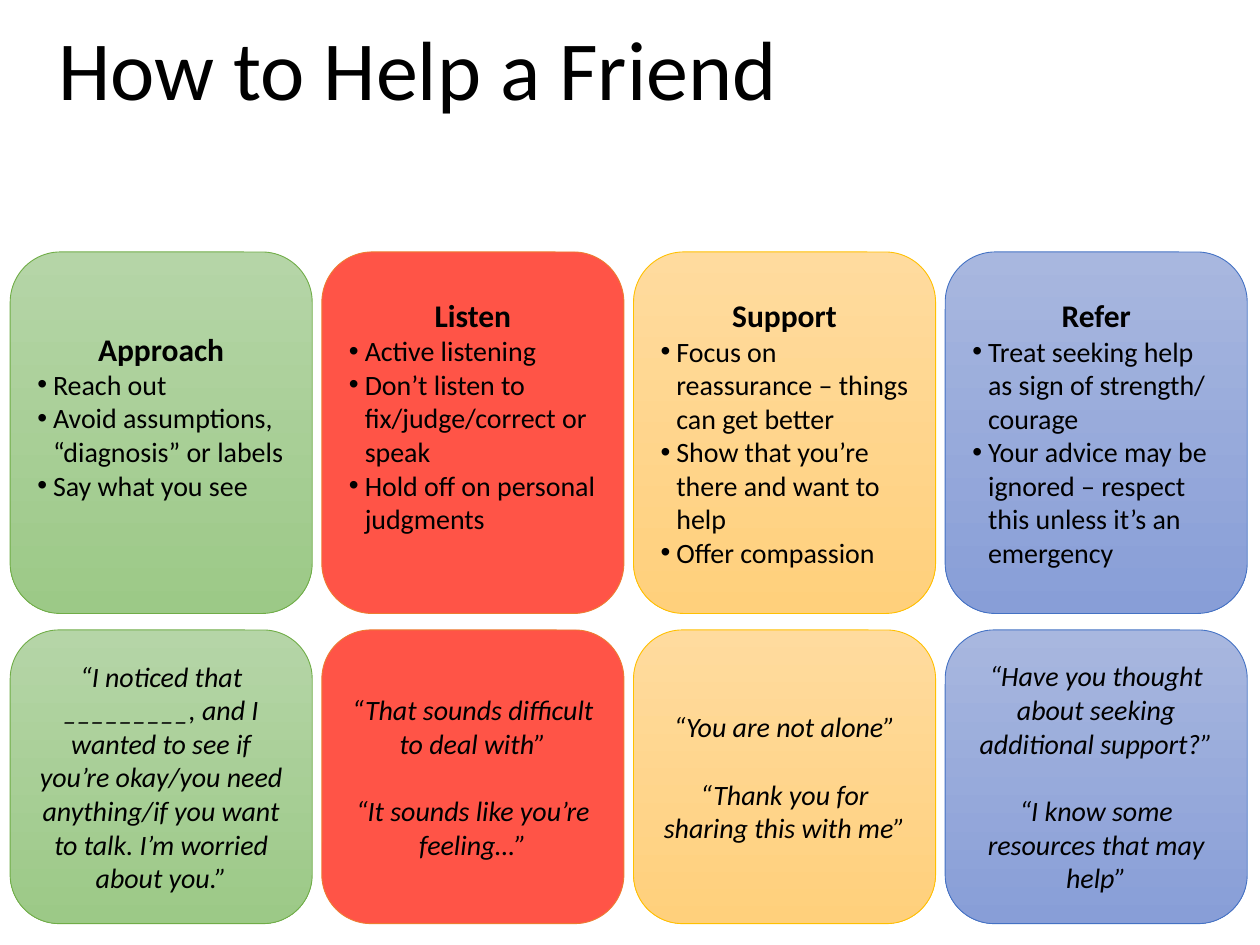
from lxml.etree import SubElement
from pptx import Presentation
from pptx.dml.color import RGBColor
from pptx.enum.shapes import MSO_SHAPE
from pptx.enum.text import MSO_ANCHOR, MSO_AUTO_SIZE, PP_ALIGN
from pptx.oxml.ns import qn
from pptx.util import Pt

TITLE = "How to Help a Friend"
# "fill" holds one colour, or the top and bottom of a gradient.
# "lift" raises the centred tips by adding to the bottom margin.
STEPS = [
    dict(name="Approach", fill=["B5D5A7", "9CC987"], outline="70AD47", lift=19.5,
         tips=["Reach out",
               "Avoid assumptions, “diagnosis” or labels",
               "Say what you see"],
         quotes=["“I noticed that _________, and I wanted to see if you’re okay/you need "
                 "anything/if you want to talk. I’m worried about you.”"]),
    dict(name="Listen", fill=["FF5447"], outline="ED7D31", lift=19.5,
         tips=["Active listening",
               "Don’t listen to fix/judge/correct or speak",
               "Hold off on personal judgments"],
         quotes=["“That sounds difficult to deal with”",
                 "“It sounds like you’re feeling…”"]),
    dict(name="Support", fill=["FFDB9E", "FFD07C"], outline="FFC000", lift=0,
         tips=["Focus on reassurance – things can get better",
               "Show that you’re there and want to help",
               "Offer compassion"],
         quotes=["“You are not alone”",
                 "“Thank you for sharing this with me”"]),
    dict(name="Refer", fill=["A8B7DF", "889ED7"], outline="4472C4", lift=0,
         tips=["Treat seeking help as sign of strength/\vcourage",
               "Your advice may be ignored – respect this unless it’s an emergency"],
         quotes=["“Have you thought about seeking additional support?”",
                 "“I know some resources that may help”"]),
]

FONT = "Calibri"
LEFT, PITCH, CARD_WIDTH = 5.8, 178.1, 172.6
TIPS_TOP, TIPS_HEIGHT = 144, 206.6
QUOTES_TOP, QUOTES_HEIGHT = 360, 167.8
BULLET_INDENT = 9
QUOTE_GAP = 19.5


def rgb(hex_code):
    return RGBColor.from_string(hex_code)


def style(paragraph, size, bold=False, italic=False):
    for run in paragraph.runs:
        run.font.name = FONT
        run.font.size = Pt(size)
        run.font.bold = bold
        run.font.italic = italic
        run.font.color.rgb = rgb("000000")


def add_bullet(paragraph):
    properties = paragraph._p.get_or_add_pPr()
    properties.set("marL", str(Pt(BULLET_INDENT)))
    properties.set("indent", str(-Pt(BULLET_INDENT)))
    SubElement(properties, qn("a:buFont"), typeface="Arial")
    SubElement(properties, qn("a:buChar"), char="•")


def add_card(slide, step, left, top, height):
    """Add an empty rounded card in the step's colours; return its text frame."""
    card = slide.shapes.add_shape(MSO_SHAPE.ROUNDED_RECTANGLE,
                                  Pt(left), Pt(top), Pt(CARD_WIDTH), Pt(height))
    card.shadow.inherit = False
    card.line.color.rgb = rgb(step["outline"])
    card.line.width = Pt(0.5)
    if len(step["fill"]) == 1:
        card.fill.solid()
        card.fill.fore_color.rgb = rgb(step["fill"][0])
    else:
        card.fill.gradient()
        card.fill.gradient_angle = 270
        for stop, color in zip(card.fill.gradient_stops, step["fill"]):
            stop.color.rgb = rgb(color)
    frame = card.text_frame
    frame.word_wrap = True
    frame.vertical_anchor = MSO_ANCHOR.MIDDLE
    return frame


def add_tips(slide, step, left):
    frame = add_card(slide, step, left, TIPS_TOP, TIPS_HEIGHT)
    frame.margin_bottom = Pt(3.6 + step["lift"])
    frame.text = step["name"]
    heading = frame.paragraphs[0]
    heading.alignment = PP_ALIGN.CENTER
    style(heading, 18, bold=True)
    for tip in step["tips"]:
        paragraph = frame.add_paragraph()
        paragraph.text = tip
        paragraph.alignment = PP_ALIGN.LEFT
        add_bullet(paragraph)
        style(paragraph, 16)


def add_quotes(slide, step, left):
    frame = add_card(slide, step, left, QUOTES_TOP, QUOTES_HEIGHT)
    for i, quote in enumerate(step["quotes"]):
        paragraph = frame.add_paragraph() if i else frame.paragraphs[0]
        paragraph.text = quote
        paragraph.alignment = PP_ALIGN.CENTER
        if i:
            paragraph.space_before = Pt(QUOTE_GAP)
        style(paragraph, 16, italic=True)


def add_title(slide):
    title = slide.shapes.title
    title.left, title.top, title.width, title.height = Pt(26), Pt(6), Pt(503), Pt(65.5)
    frame = title.text_frame
    frame.text = TITLE
    frame.word_wrap = True
    frame.auto_size = MSO_AUTO_SIZE.NONE
    frame.vertical_anchor = MSO_ANCHOR.TOP
    frame.paragraphs[0].alignment = PP_ALIGN.LEFT
    style(frame.paragraphs[0], 48)


def main():
    deck = Presentation()
    deck.slide_width, deck.slide_height = Pt(720), Pt(540)
    slide = deck.slides.add_slide(deck.slide_layouts[5])
    add_title(slide)
    for column, step in enumerate(STEPS):
        left = LEFT + column * PITCH
        add_tips(slide, step, left)
        add_quotes(slide, step, left)
    deck.save("out.pptx")


if __name__ == "__main__":
    main()
